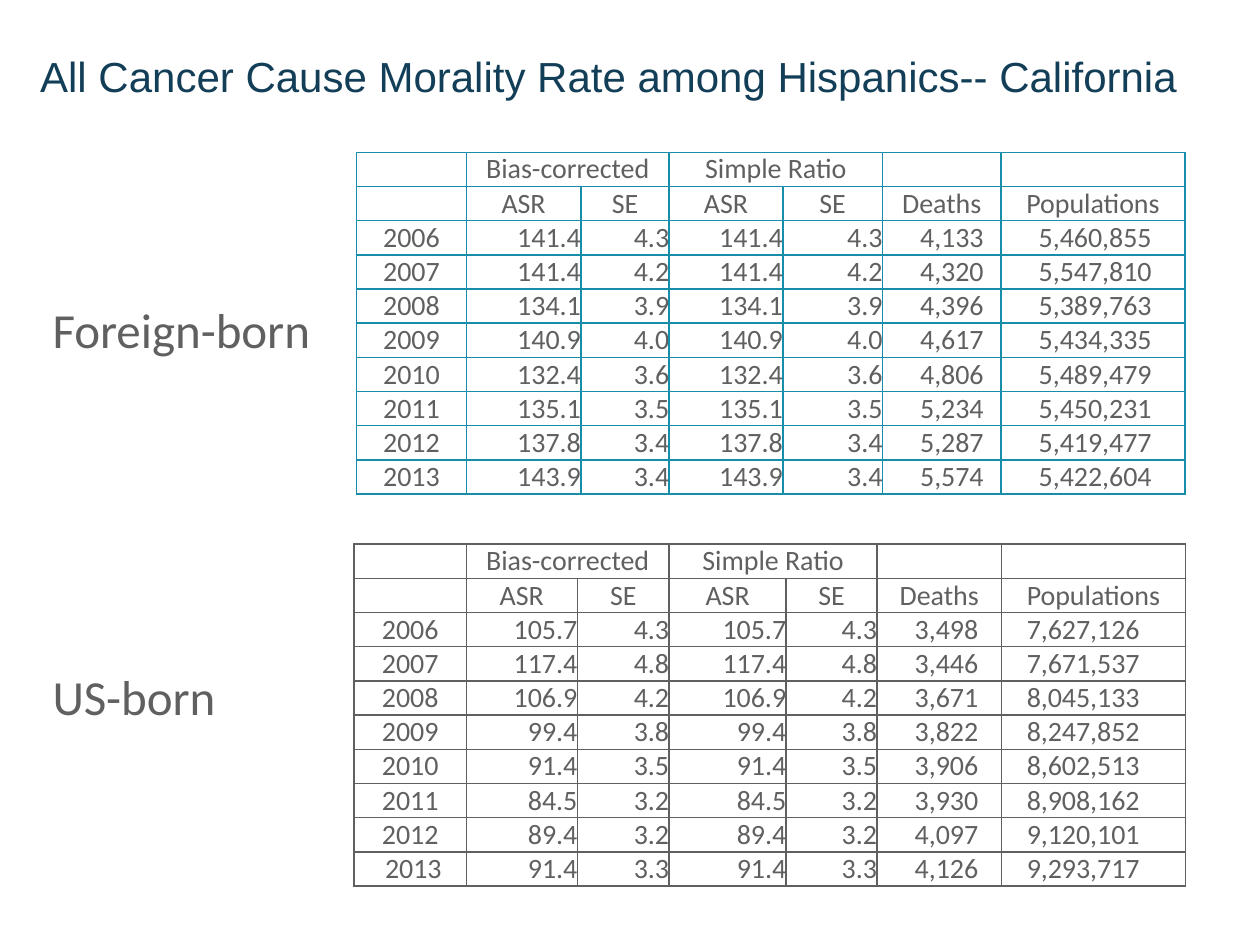
import lxml.etree
import pptx
import pptx.dml.color
import pptx.enum.text
import pptx.oxml.ns
import pptx.util

Cm = pptx.util.Cm
Pt = pptx.util.Pt
ALIGN = pptx.enum.text.PP_ALIGN
ANCHOR = pptx.enum.text.MSO_ANCHOR
qn = pptx.oxml.ns.qn

NAVY = pptx.dml.color.RGBColor(0x12, 0x3E, 0x57)
TEAL = pptx.dml.color.RGBColor(0x17, 0x8D, 0xA9)
GREY = pptx.dml.color.RGBColor(0x60, 0x60, 0x60)

TITLE_FONT = {"name": "Arial", "size": Pt(24)}
LABEL_FONT = {"name": "Calibri", "size": Pt(28)}
CELL_FONT = {"name": "Calibri", "size": Pt(16)}
NO_MARGINS = {"margin_left": 0, "margin_top": 0, "margin_right": 0, "margin_bottom": 0}

ROW_HEIGHT = 0.69
GROUP_HEADER = ("", "Bias-corrected", "", "Simple Ratio", "", "", "")
COLUMN_HEADER = ("", "ASR", "SE", "ASR", "SE", "Deaths", "Populations")
BODY_ALIGN = (ALIGN.CENTER,) + (ALIGN.RIGHT,) * 4 + (ALIGN.LEFT,) * 2

# Year, age-standardised rate, standard error, deaths, population
FOREIGN_BORN = (
    ("2006", "141.4", "4.3", "4,133", "5,460,855"),
    ("2007", "141.4", "4.2", "4,320", "5,547,810"),
    ("2008", "134.1", "3.9", "4,396", "5,389,763"),
    ("2009", "140.9", "4.0", "4,617", "5,434,335"),
    ("2010", "132.4", "3.6", "4,806", "5,489,479"),
    ("2011", "135.1", "3.5", "5,234", "5,450,231"),
    ("2012", "137.8", "3.4", "5,287", "5,419,477"),
    ("2013", "143.9", "3.4", "5,574", "5,422,604"),
)
US_BORN = (
    ("2006", "105.7", "4.3", "3,498", "7,627,126"),
    ("2007", "117.4", "4.8", "3,446", "7,671,537"),
    ("2008", "106.9", "4.2", "3,671", "8,045,133"),
    ("2009", "99.4", "3.8", "3,822", "8,247,852"),
    ("2010", "91.4", "3.5", "3,906", "8,602,513"),
    ("2011", "84.5", "3.2", "3,930", "8,908,162"),
    ("2012", "89.4", "3.2", "4,097", "9,120,101"),
    (" 2013", "91.4", "3.3", "4,126", "9,293,717"),
)


def set_all(target, values):
    for name, value in values.items():
        setattr(target, name, value)


def write(paragraph, text, font, colour):
    run = paragraph.add_run()
    run.text = text
    set_all(run.font, font)
    run.font.color.rgb = colour


def add_text(slide, box, text, font, colour, frame_format):
    frame = slide.shapes.add_textbox(*map(Cm, box)).text_frame
    set_all(frame, frame_format)
    write(frame.paragraphs[0], text, font, colour)


def draw_borders(cell, colour):
    properties = cell._tc.get_or_add_tcPr()
    for position, side in enumerate(("a:lnL", "a:lnR", "a:lnT", "a:lnB")):
        line = lxml.etree.Element(qn(side), w=str(Pt(1)))
        fill = lxml.etree.SubElement(line, qn("a:solidFill"))
        lxml.etree.SubElement(fill, qn("a:srgbClr"), val=str(colour))
        properties.insert(position, line)


def fill_cell(cell, text, align, anchor, indent, border):
    set_all(cell, NO_MARGINS)
    set_all(cell, {"margin_left": Cm(indent), "vertical_anchor": anchor})
    cell.fill.background()
    draw_borders(cell, border)
    paragraph = cell.text_frame.paragraphs[0]
    paragraph.alignment = align
    if text:
        write(paragraph, text, CELL_FONT, GREY)
    else:
        # Keeps an empty cell from stretching its row
        size = str(int(CELL_FONT["size"].pt * 100))
        lxml.etree.SubElement(paragraph._p, qn("a:endParaRPr"), sz=size)


def add_rate_table(slide, left, top, widths, records, indents, border):
    """Indents are those of the deaths and population columns."""
    body = [(year, asr, se, asr, se, deaths, population)
            for year, asr, se, deaths, population in records]
    rows = [GROUP_HEADER, COLUMN_HEADER] + body
    table = slide.shapes.add_table(
        len(rows), len(widths), Cm(left), Cm(top),
        Cm(sum(widths)), Cm(ROW_HEIGHT * len(rows))).table
    set_all(table, {"first_row": False, "horz_banding": False})
    for column, width in zip(table.columns, widths):
        column.width = Cm(width)
    column_indents = (0,) * 5 + indents
    for r, values in enumerate(rows):
        table.rows[r].height = Cm(ROW_HEIGHT)
        for c, text in enumerate(values):
            if r < 2:
                layout = (ALIGN.CENTER, ANCHOR.MIDDLE, 0)
            else:
                layout = (BODY_ALIGN[c], ANCHOR.BOTTOM, column_indents[c])
            fill_cell(table.cell(r, c), text, *layout, border)
    for c in (1, 3):
        table.cell(0, c).merge(table.cell(0, c + 1))


def add_title(slide, box):
    add_text(slide, box, "All Cancer Cause Morality Rate among Hispanics-- California",
             TITLE_FONT, NAVY, {**NO_MARGINS, "word_wrap": True})


def add_birthplace_section(slide, box, label, label_width, label_drop,
                           table_offset, widths, records, indents, border):
    """Label on the left and its table on the right, from the box's corner."""
    left, top = box
    add_text(slide, (left, top + label_drop, label_width, 1.45), label,
             LABEL_FONT, GREY, {"word_wrap": False})
    add_rate_table(slide, left + table_offset, top, widths, records, indents, border)


def main():
    deck = pptx.Presentation()
    set_all(deck, {"slide_width": Cm(25.4), "slide_height": Cm(19.05)})
    slide = deck.slides.add_slide(deck.slide_layouts[6])
    add_title(slide, (0.81, 1.02, 23.62, 1.45))
    add_birthplace_section(
        slide, (0.81, 3.07), "Foreign-born", 5.77, 2.85, 6.38,
        (2.21, 2.31, 1.78, 2.29, 2.01, 2.39, 3.71), FOREIGN_BORN, (0.76, 0.76), TEAL)
    add_birthplace_section(
        slide, (0.81, 10.97), "US-born", 3.84, 2.34, 6.33,
        (2.26, 2.24, 1.85, 2.36, 1.83, 2.51, 3.71), US_BORN, (0.76, 0.51), GREY)
    deck.save("out.pptx")


if __name__ == "__main__":
    main()
